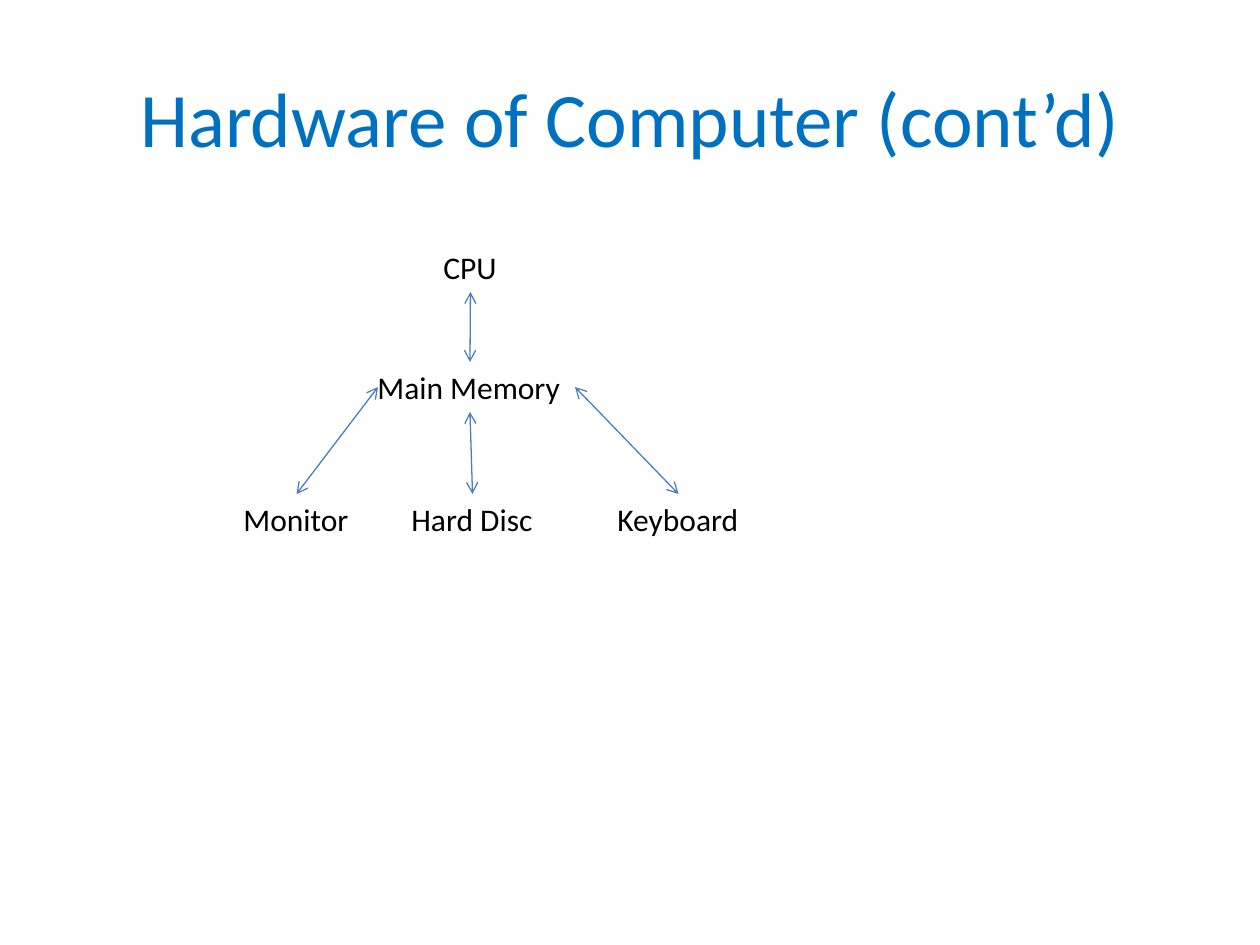
from lxml import etree
from pptx import Presentation
from pptx import util as u
from pptx.dml.color import RGBColor
from pptx.enum import shapes, text
from pptx.oxml.ns import qn

TITLE = "Hardware of Computer (cont’d)"
TITLE_AREA = (63, 38, 1134, 157)
BOX_HEIGHT = 50
# label: (left, top, width) in px
PARTS = {
    "CPU": (431, 242, 79),
    "Main Memory": (365, 362, 210),
    "Monitor": (231, 494, 131),
    "Hard Disc": (399, 494, 147),
    "Keyboard": (605, 494, 147),
}
TOP, BOTTOM, RIGHT = 0, 2, 3
# (from part, side, to part, side)
LINKS = [
    ("CPU", BOTTOM, "Main Memory", TOP),
    ("Main Memory", BOTTOM, "Hard Disc", TOP),
    ("Main Memory", RIGHT, "Keyboard", TOP),
]
MEMORY_TEXT_EDGE = (378, 387)  # the Monitor arrow ends at the text, inside the box

FONT = "Calibri"
TITLE_BLUE = RGBColor(0x00, 0x70, 0xC0)
LINE_BLUE = RGBColor(0x4B, 0x7E, 0xBC)
BLACK = RGBColor(0x00, 0x00, 0x00)


def px(count):
    return u.Emu(round(count * 914400 / 126))


def style(para, size, color):
    para.font.name = FONT
    para.font.size = u.Pt(size)
    para.font.color.rgb = color


def add_label(page, label, left, top, width):
    box = page.shapes.add_textbox(px(left), px(top), px(width), px(BOX_HEIGHT))
    frame = box.text_frame
    frame.word_wrap = False
    frame.auto_size = text.MSO_AUTO_SIZE.SHAPE_TO_FIT_TEXT
    frame.text = label
    style(frame.paragraphs[0], 18, BLACK)
    return box


def add_arrow(page, start, side, end=(0, 0)):
    """Add a double-headed arrow from a side of the box start to a point in px."""
    arrow = page.shapes.add_connector(
        shapes.MSO_CONNECTOR.STRAIGHT, 0, 0, *map(px, end))
    arrow.begin_connect(start, side)
    arrow.line.color.rgb = LINE_BLUE
    arrow.line.width = u.Pt(0.75)
    outline = arrow.line._get_or_add_ln()
    for tag in ("a:headEnd", "a:tailEnd"):
        etree.SubElement(outline, qn(tag), type="arrow")
    etree.SubElement(arrow._element.spPr, qn("a:effectLst"))
    return arrow


def main():
    deck = Presentation()
    deck.slide_width, deck.slide_height = px(1260), px(945)
    page = deck.slides.add_slide(deck.slide_layouts[5])

    title = page.shapes.title
    title.left, title.top, title.width, title.height = map(px, TITLE_AREA)
    title.text_frame.text = TITLE
    title.text_frame.vertical_anchor = text.MSO_ANCHOR.MIDDLE
    heading = title.text_frame.paragraphs[0]
    heading.alignment = text.PP_ALIGN.CENTER
    style(heading, 44, TITLE_BLUE)

    boxes = {label: add_label(page, label, *place)
             for label, place in PARTS.items()}
    for start, start_side, end, end_side in LINKS:
        arrow = add_arrow(page, boxes[start], start_side)
        arrow.end_connect(boxes[end], end_side)
    add_arrow(page, boxes["Monitor"], TOP, MEMORY_TEXT_EDGE)

    deck.save("out.pptx")


if __name__ == "__main__":
    main()
